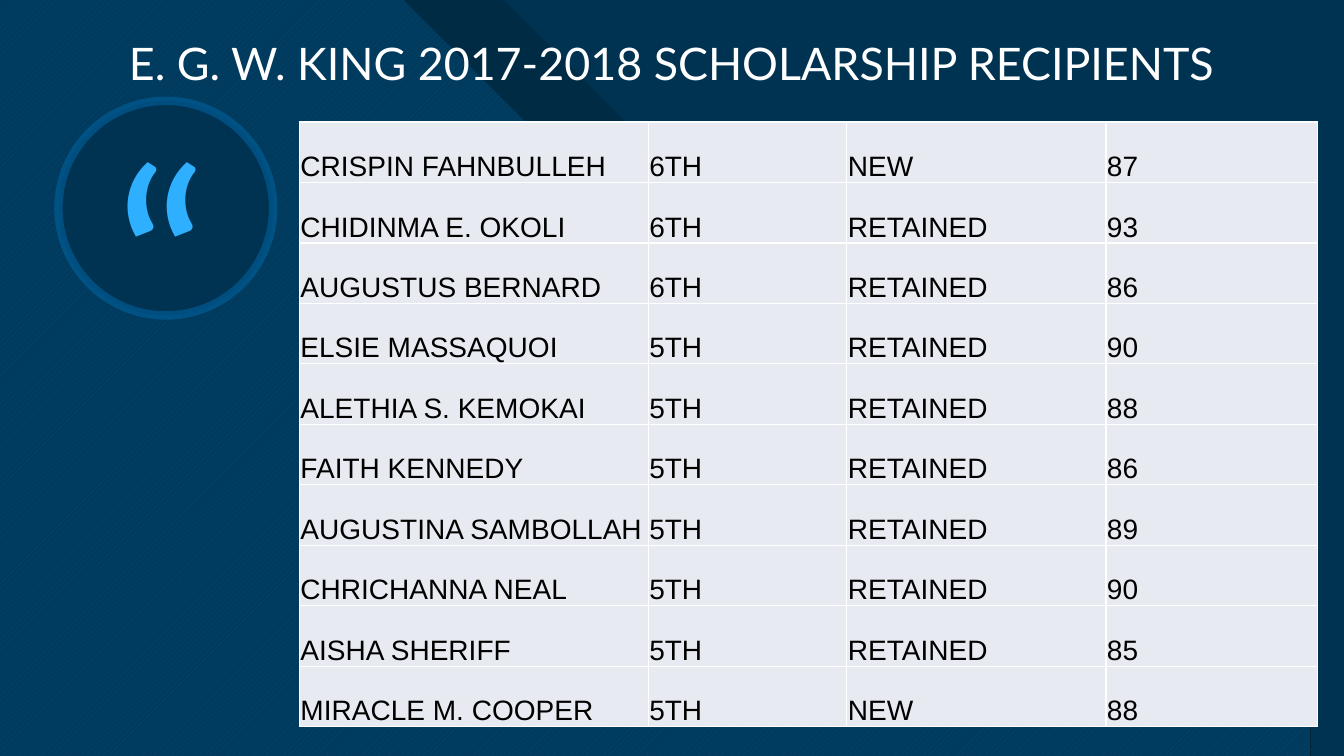
from lxml import etree
from pptx import Presentation
from pptx.dml.color import RGBColor
from pptx.enum import dml, shapes, text
from pptx.oxml.ns import qn
from pptx.util import Inches, Pt

TITLE = "E. G. W. KING 2017-2018 SCHOLARSHIP RECIPIENTS"
RECIPIENTS = [
    ("CRISPIN FAHNBULLEH", "6TH", "NEW", "87"),
    ("CHIDINMA E. OKOLI", "6TH", "RETAINED", "93"),
    ("AUGUSTUS BERNARD", "6TH", "RETAINED", "86"),
    ("ELSIE MASSAQUOI", "5TH", "RETAINED", "90"),
    ("ALETHIA S. KEMOKAI", "5TH", "RETAINED", "88"),
    ("FAITH KENNEDY", "5TH", "RETAINED", "86"),
    ("AUGUSTINA SAMBOLLAH", "5TH", "RETAINED", "89"),
    ("CHRICHANNA NEAL", "5TH", "RETAINED", "90"),
    ("AISHA SHERIFF", "5TH", "RETAINED", "85"),
    ("MIRACLE M. COOPER", "5TH", "NEW", "88"),
]
COLUMN_WIDTHS = (3.46, 1.97, 2.57, 2.1)
ROW_HEIGHT = 0.6
WIDTH, HEIGHT = 13.33, 7.5
STEP_Y = 2.97  # height at which each backdrop edge turns level


class Theme:
    navy, blue, sky, teal = "003352", "0065A4", "2FAFFF", "47C3D3"
    white, black, cell = "FFFFFF", "000000", "E7EAF0"
    heading_font, body_font = "Lato", "Arial"
    title_size, quote_size, body_size = 32, 184, 20


def rgb(color):
    return RGBColor.from_string(color)


def set_opacity(color_parent, percent):
    color = color_parent.find(".//" + qn("a:srgbClr"))
    etree.SubElement(color, qn("a:alpha"), val=str(percent * 1000))


def write(frame, content, *, size, color, font=Theme.heading_font,
          align=text.PP_ALIGN.CENTER):
    paragraph = frame.paragraphs[0]
    paragraph.alignment = align
    run = paragraph.add_run()
    run.text = content
    run.font.size, run.font.name = Pt(size), font
    run.font.bold = False
    run.font.color.rgb = rgb(color)


def format_frame(frame, wrap, inset=0):
    frame.word_wrap = wrap
    frame.auto_size = text.MSO_AUTO_SIZE.NONE
    frame.vertical_anchor = text.MSO_ANCHOR.TOP
    frame.margin_left = frame.margin_right = Inches(inset * 2)
    frame.margin_top = frame.margin_bottom = Inches(inset)


def add_panel(slide, top_x):
    """Fill the area left of an edge that runs down at 45 degrees, level, then down again."""
    turn_x = top_x + STEP_Y
    level_end = turn_x + 1.26
    end_x = min(WIDTH, level_end + HEIGHT - STEP_Y)
    end_y = STEP_Y + end_x - level_end
    edge = [(top_x, 0), (turn_x, STEP_Y), (level_end, STEP_Y), (end_x, end_y)]
    outline = edge + [(end_x, HEIGHT), (0, HEIGHT)]
    builder = slide.shapes.build_freeform(0, 0, scale=Inches(1))
    builder.add_line_segments(outline, close=True)
    panel = builder.convert_to_shape()
    panel.shadow.inherit = False
    panel.line.fill.background()
    return panel


def add_backdrop(slide):
    slide.background.fill.solid()
    slide.background.fill.fore_color.rgb = rgb(Theme.navy)

    band = add_panel(slide, 4.9)
    band.fill.solid()
    band.fill.fore_color.rgb = rgb(Theme.black)

    stripes = add_panel(slide, 4.49)
    stripes.fill.patterned()
    stripes.fill.pattern = dml.MSO_PATTERN.WIDE_UPWARD_DIAGONAL
    stripes.fill.fore_color.rgb = rgb(Theme.teal)
    stripes.fill.back_color.rgb = rgb(Theme.blue)

    veil = add_panel(slide, 6.95)
    veil.fill.solid()
    veil.fill.fore_color.rgb = rgb(Theme.navy)
    set_opacity(veil.element.spPr, 85)


def add_quote_badge(slide):
    ring = slide.shapes.add_shape(shapes.MSO_SHAPE.OVAL, Inches(0.58), Inches(1),
                                  Inches(2.13), Inches(2.13))
    ring.shadow.inherit = False
    ring.fill.solid()
    ring.fill.fore_color.rgb = rgb(Theme.navy)
    ring.line.width = Pt(6)
    ring.line.color.rgb = rgb(Theme.blue)
    set_opacity(ring.element.spPr.find(qn("a:ln")), 55)

    quote = slide.shapes.add_textbox(Inches(1.05), Inches(1.01), Inches(1.1), Inches(3.13))
    format_frame(quote.text_frame, wrap=False)
    write(quote.text_frame, "“", size=Theme.quote_size, color=Theme.sky)


def place_title(slide):
    title = slide.shapes.title
    title.left, title.top = Inches(0.52), Inches(0.3)
    title.width, title.height = Inches(12.29), Inches(5.52)
    format_frame(title.text_frame, wrap=True, inset=0.05)
    write(title.text_frame, TITLE, size=Theme.title_size, color=Theme.white)
    title.element.getparent().append(title.element)  # bring in front of the backdrop


def add_borders(cell):
    properties = cell._tc.get_or_add_tcPr()
    for side in ("lnL", "lnR", "lnT", "lnB"):
        border = etree.SubElement(properties, qn("a:" + side), w=str(Pt(1)))
        fill = etree.SubElement(border, qn("a:solidFill"))
        etree.SubElement(fill, qn("a:srgbClr"), val=Theme.white)


def add_recipients(slide):
    table = slide.shapes.add_table(
        len(RECIPIENTS), len(COLUMN_WIDTHS), Inches(2.97), Inches(1.21),
        Inches(sum(COLUMN_WIDTHS)), Inches(ROW_HEIGHT * len(RECIPIENTS))).table
    table.first_row = table.horz_banding = False
    for column, width in zip(table.columns, COLUMN_WIDTHS):
        column.width = Inches(width)
    for row, recipient in zip(table.rows, RECIPIENTS):
        row.height = Inches(ROW_HEIGHT)
        for cell, value in zip(row.cells, recipient):
            add_borders(cell)
            cell.fill.solid()
            cell.fill.fore_color.rgb = rgb(Theme.cell)
            cell.vertical_anchor = text.MSO_ANCHOR.BOTTOM
            cell.margin_left = cell.margin_right = cell.margin_top = Inches(0.01)
            cell.margin_bottom = 0
            write(cell.text_frame, value, size=Theme.body_size, color=Theme.black,
                  font=Theme.body_font, align=text.PP_ALIGN.LEFT)


def main():
    deck = Presentation()
    deck.slide_width, deck.slide_height = Inches(WIDTH), Inches(HEIGHT)
    slide = deck.slides.add_slide(deck.slide_layouts[5])
    add_backdrop(slide)
    add_quote_badge(slide)
    place_title(slide)
    add_recipients(slide)
    deck.save("out.pptx")


if __name__ == "__main__":
    main()
